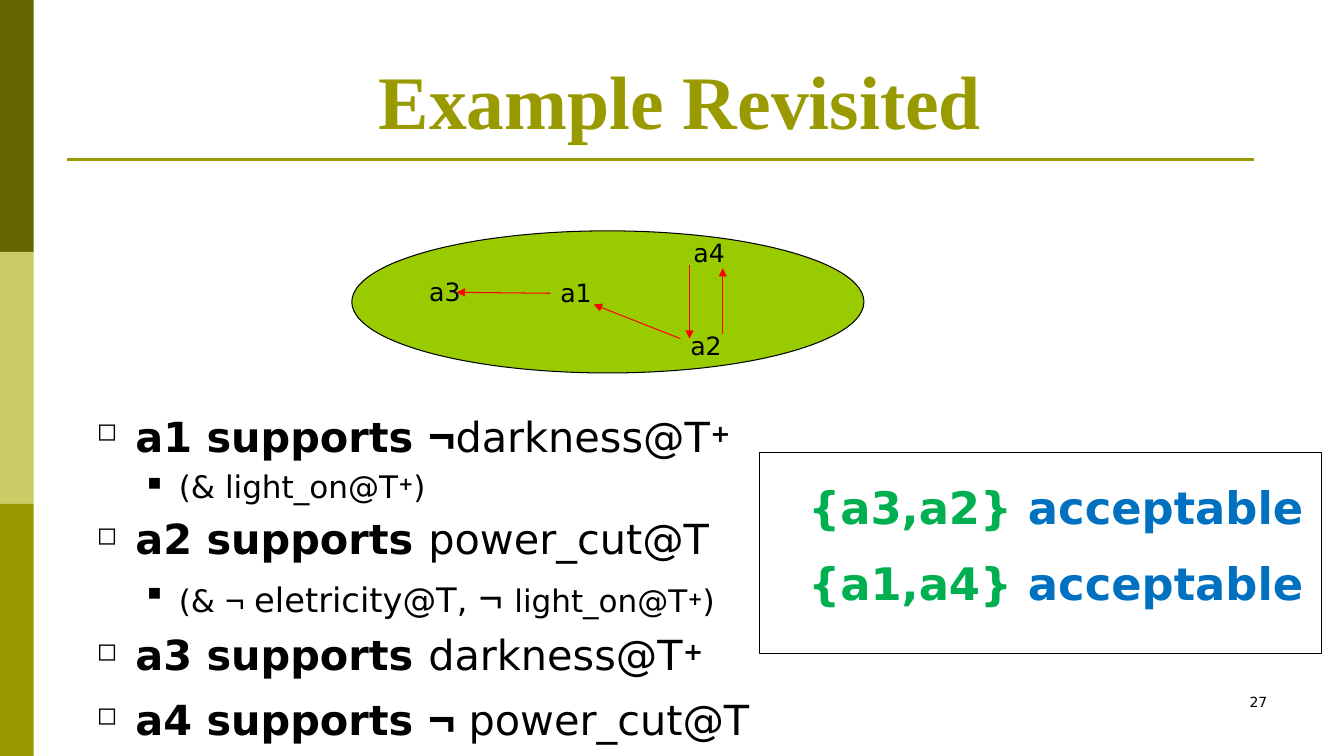
from lxml import etree
from pptx import Presentation
from pptx.dml.color import RGBColor
from pptx.enum.shapes import MSO_CONNECTOR, MSO_SHAPE
from pptx.enum.text import MSO_ANCHOR, PP_ALIGN
from pptx.oxml.ns import qn
from pptx.util import Pt

LINE = MSO_CONNECTOR.STRAIGHT
RECT, OVAL = MSO_SHAPE.RECTANGLE, MSO_SHAPE.OVAL
TOP, BOTTOM = MSO_ANCHOR.TOP, MSO_ANCHOR.BOTTOM
LEFT, CENTER, RIGHT = PP_ALIGN.LEFT, PP_ALIGN.CENTER, PP_ALIGN.RIGHT

BLACK = RGBColor(0x00, 0x00, 0x00)
DARK_OLIVE = RGBColor(0x66, 0x66, 0x00)
PALE_OLIVE = RGBColor(0xCC, 0xCC, 0x66)
OLIVE = RGBColor(0x99, 0x99, 0x00)
LIME = RGBColor(0x99, 0xCC, 0x00)
RED = RGBColor(0xFF, 0x00, 0x00)
GREEN = RGBColor(0x00, 0xB0, 0x50)
BLUE = RGBColor(0x00, 0x70, 0xC0)

SANS, ARIAL, SERIF = "DejaVu Sans", "Arial", "Times New Roman"
BOLD = {"bold": True}
PLUS = ("+", {"bold": True, "baseline": 25})
LEVELS = [
    {"size": 29.6, "indent": 27.4, "hang": 27.4, "bullet": "◻"},
    {"size": 22.2, "indent": 58.5, "hang": 22.3, "bullet": "■"},
]


def negation(size, bold=False):
    """Return the format of a negation sign."""
    return {"name": ARIAL, "size": size, "italic": True, "bold": bold}


SUPPORTS = [
    (0, 0, [("a1 supports ", BOLD), ("¬", negation(33.3, True)),
            ("darkness@T", {}), PLUS]),
    (1, 3.8, [("(& light_on@T", {}), PLUS, (")", {})]),
    (0, 5.9, [("a2 supports ", BOLD), ("power_cut@T", {})]),
    (1, 6.5, [("(& ", {}), ("¬ ", negation(24.1)),
              ("eletricity@T, ", {"size": 24.1}), ("¬ ", negation(29.6)),
              ("light_on@T", {}), PLUS, (")", {})]),
    (0, 5.6, [("a3 supports ", BOLD), ("darkness@T", {}), PLUS]),
    (0, 7.4, [("a4 supports ", BOLD), ("¬ ", negation(33.3, True)),
              ("power_cut@T", {})]),
]
NODES = {"a4": (236.9, 1.3), "a2": (234.7, 67.7),
         "a1": (141.8, 29.6), "a3": (48.2, 28.9)}
ATTACKS = [((265, 73.4), (265, 26.6)), ((241.2, 24.5), (241.2, 77)),
           ((234.7, 77), (172.8, 52.6)), ((141.8, 44.6), (74.9, 43.9))]
ACCEPTABLE = ["{a3,a2} ", "{a1,a4} "]


def add_run(p, text, **fmt):
    """Add a run with the given font values."""
    r = p.add_run()
    r.text = text
    values = {"name": SANS, "size": 18, "color": BLACK, **fmt}
    for key, value in values.items():
        if key == "color":
            r.font.color.rgb = value
        elif key == "baseline":
            r.font._element.set("baseline", str(value * 1000))
        else:
            setattr(r.font, key, Pt(value) if key == "size" else value)


def add_frame(s, box, anchor=TOP, wrap=True):
    """Add a text box and return its frame."""
    tf = s.shapes.add_textbox(*map(Pt, box)).text_frame
    tf.word_wrap, tf.vertical_anchor = wrap, anchor
    return tf


def add_text(s, box, text, align=LEFT, anchor=TOP, wrap=True, **fmt):
    """Add a text box holding one line."""
    p = add_frame(s, box, anchor, wrap).paragraphs[0]
    p.alignment = align
    add_run(p, text, **fmt)


def add_block(s, kind, box, fill=None, line=None):
    """Add a flat preset shape."""
    sp = s.shapes.add_shape(kind, *map(Pt, box))
    sp.shadow.inherit = False
    if fill is None:
        sp.fill.background()
    else:
        sp.fill.solid()
        sp.fill.fore_color.rgb = fill
    if line is None:
        sp.line.fill.background()
    else:
        sp.line.color.rgb, sp.line.width = line, Pt(0.75)
    return sp


def add_line(s, start, end, color, width, arrow=False):
    """Add a straight line, with an arrowhead at its end if asked."""
    c = s.shapes.add_connector(LINE, *map(Pt, (*start, *end)))
    c.line.color.rgb, c.line.width = color, Pt(width)
    if arrow:
        etree.SubElement(c.line._get_or_add_ln(), qn("a:tailEnd"),
                         type="triangle")
    etree.SubElement(c._element.spPr, qn("a:effectLst"))


def set_bullet(p, level):
    """Give a paragraph the bullet and indents of its level."""
    pPr = p._p.get_or_add_pPr()
    pPr.set("marL", str(Pt(level["indent"])))
    pPr.set("indent", str(-Pt(level["hang"])))
    color = etree.SubElement(pPr, qn("a:buClr"))
    etree.SubElement(color, qn("a:srgbClr"), val=str(BLACK))
    etree.SubElement(pPr, qn("a:buSzPct"), val="60000")
    etree.SubElement(pPr, qn("a:buChar"), char=level["bullet"])


def draw_frame(s, x, y, w, h):
    """Draw the side bars, title, rule and slide number."""
    bar = h / 3
    for i, color in enumerate((DARK_OLIVE, PALE_OLIVE, OLIVE)):
        add_block(s, RECT, (x, y + i * bar, 24, bar), color)
    add_line(s, (x + 48, y + 113.9), (x + w - 64.3, y + 113.9), OLIVE, 1.5)
    add_text(s, (x + 60.5, y + 16.6, 864, 90), "Example Revisited ",
             CENTER, BOTTOM, name=SERIF, size=54, bold=True, color=OLIVE)
    add_text(s, (x + w - 271.7, y + h - 48.2, 224, 36), "27", RIGHT, size=10)


def draw_graph(s, x, y, w, h):
    """Draw the attack graph inside its ellipse."""
    add_block(s, OVAL, (x, y, w, h), LIME, BLACK)
    for name, (dx, dy) in NODES.items():
        add_text(s, (x + dx, y + dy, 36.7, 28.8), name, wrap=False)
    for start, end in ATTACKS:
        points = [(x + dx, y + dy) for dx, dy in (start, end)]
        add_line(s, *points, RED, 0.75, arrow=True)


def draw_supports(s, x, y, w, h):
    """Write the bulleted list of what each argument supports."""
    tf = add_frame(s, (x, y, w, h))
    tf.margin_left = tf.margin_right = tf.margin_top = tf.margin_bottom = 0
    for i, (depth, gap, runs) in enumerate(SUPPORTS):
        p = tf.add_paragraph() if i else tf.paragraphs[0]
        level = LEVELS[depth]
        p.level, p.space_before = depth, Pt(gap)
        set_bullet(p, level)
        for text, fmt in runs:
            add_run(p, text, **{"size": level["size"], **fmt})


def draw_acceptable(s, x, y, w, h):
    """Draw the outlined box of acceptable sets."""
    tf = add_block(s, RECT, (x, y, w, h), line=BLACK).text_frame
    tf.word_wrap, tf.vertical_anchor = True, TOP
    tf.margin_left, tf.margin_top, tf.margin_right = Pt(35.3), Pt(31), 0
    for i, members in enumerate(ACCEPTABLE):
        p = tf.add_paragraph() if i else tf.paragraphs[0]
        p.alignment, p.line_spacing = LEFT, Pt(27.1)
        p.space_before = Pt(27.1 * i)
        for text, color in ((members, GREEN), ("acceptable", BLUE)):
            add_run(p, text, size=32, bold=True, color=color)


def main():
    """Build and save the slide."""
    prs = Presentation()
    prs.slide_width, prs.slide_height = Pt(960), Pt(540)
    s = prs.slides.add_slide(prs.slide_layouts[6])
    draw_frame(s, 0, 0, 960, 540)
    draw_supports(s, 69.3, 289.9, 836, 246)
    draw_graph(s, 251.3, 164.9, 365.8, 101.5)
    draw_acceptable(s, 542.2, 323.3, 401.8, 143.3)
    prs.save("out.pptx")


if __name__ == "__main__":
    main()
